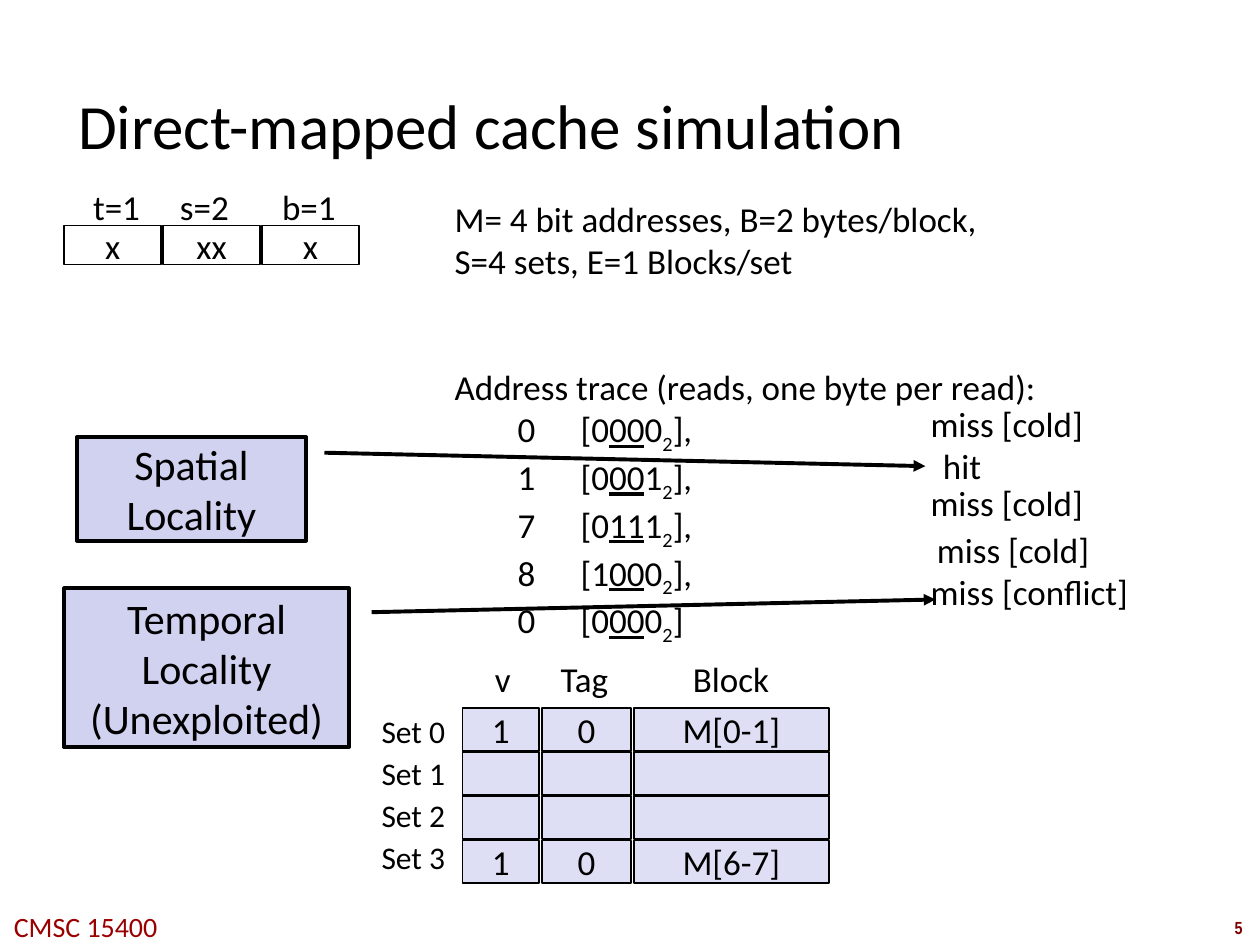
from dataclasses import dataclass

import pptx
import pptx.dml.color
import pptx.enum.shapes
import pptx.enum.text
import pptx.oxml
import pptx.oxml.ns
import pptx.util

Inches = pptx.util.Inches
Pt = pptx.util.Pt
RGBColor = pptx.dml.color.RGBColor
Align = pptx.enum.text.PP_ALIGN
Anchor = pptx.enum.text.MSO_ANCHOR
Preset = pptx.enum.shapes.MSO_SHAPE

BLACK = RGBColor(0x00, 0x00, 0x00)
WHITE = RGBColor(0xFF, 0xFF, 0xFF)
CACHE_FILL = RGBColor(0xDE, 0xDF, 0xF5)
CALLOUT_FILL = RGBColor(0xD1, 0xD1, 0xF0)
FOOTER_RED = RGBColor(0x99, 0x00, 0x00)
NUMBER_RED = RGBColor(0x80, 0x00, 0x00)


@dataclass
class Label:
    text: str
    left: float
    top: float
    width: float
    height: float = 0.43
    size: int = 20
    align: Align = Align.LEFT
    color: RGBColor = BLACK
    line_spacing: float = 1.0
    font: str = "Calibri"
    bold: bool = False


@dataclass
class Cell:
    text: str
    left: float
    top: float
    width: float
    height: float
    fill: RGBColor


@dataclass
class Callout:
    lines: list[str]
    left: float
    top: float
    width: float
    height: float
    adjustments: list[float]


@dataclass
class Access:
    """One read: its address and the tag, set and offset bits."""
    address: int
    tag: str
    set_bits: str
    offset: str
    ending: str = "],"


def format_font(font, size: int, color: RGBColor = BLACK, **extra) -> None:
    values = {"name": "Calibri", "size": Pt(size), **extra}
    for name, value in values.items():
        setattr(font, name, value)
    font.color.rgb = color


def add_box(slide, left: float, top: float, width: float, height: float):
    return slide.shapes.add_textbox(
        Inches(left), Inches(top), Inches(width), Inches(height))


def add_label(slide, label: Label) -> None:
    box = add_box(slide, label.left, label.top, label.width, label.height)
    box.text_frame.word_wrap = False
    paragraph = box.text_frame.paragraphs[0]
    paragraph.text = label.text
    paragraph.alignment = label.align
    paragraph.line_spacing = label.line_spacing
    format_font(paragraph.font, label.size, label.color,
                name=label.font, bold=label.bold)


def add_outlined_shape(slide, preset, item, fill: RGBColor, line_width: float,
                       lines: list[str], size: int):
    shape = slide.shapes.add_shape(
        preset, Inches(item.left), Inches(item.top),
        Inches(item.width), Inches(item.height))
    shape.shadow.inherit = False
    shape.fill.solid()
    shape.fill.fore_color.rgb = fill
    shape.line.color.rgb = BLACK
    shape.line.width = Pt(line_width)
    frame = shape.text_frame
    frame.vertical_anchor = Anchor.MIDDLE
    frame.text = "\n".join(lines)
    for paragraph in frame.paragraphs:
        paragraph.alignment = Align.CENTER
        format_font(paragraph.font, size)
    return shape


def add_cell(slide, cell: Cell) -> None:
    shape = add_outlined_shape(slide, Preset.RECTANGLE, cell, cell.fill, 1,
                               [cell.text], 20)
    shape.text_frame.word_wrap = False


def add_callout(slide, callout: Callout) -> None:
    shape = add_outlined_shape(slide, Preset.LINE_CALLOUT_1, callout,
                               CALLOUT_FILL, 2.25, callout.lines, 24)
    for index, value in enumerate(callout.adjustments):
        shape.adjustments[index] = value
    arrowhead = pptx.oxml.parse_xml(
        f'<a:tailEnd {pptx.oxml.ns.nsdecls("a")} type="triangle"/>')
    shape.line._get_or_add_ln().append(arrowhead)


def add_trace(slide, accesses: list[Access]) -> None:
    frame = add_box(slide, 3.51, 1.52, 6.74, 3.46).text_frame
    frame.word_wrap = True
    frame.text = ("M= 4 bit addresses, B=2 bytes/block,\n"
                  "S=4 sets, E=1 Blocks/set\n"
                  "Address trace (reads, one byte per read):")
    frame.paragraphs[2].space_before = Pt(48)
    for access in accesses:
        paragraph = frame.add_paragraph()
        paragraph.add_run().text = f"\t{access.address}\t[{access.tag}"
        set_run = paragraph.add_run()
        set_run.text = access.set_bits
        set_run.font.underline = True
        paragraph.add_run().text = access.offset
        base_run = paragraph.add_run()
        base_run.text = "2"
        base_run.font._element.set("baseline", "-25000")
        paragraph.add_run().text = access.ending
    for paragraph in frame.paragraphs:
        for run in paragraph.runs:
            format_font(run.font, 20)


def add_title(slide) -> None:
    title = slide.shapes.title
    placement = {"left": 0.58, "top": 0.58, "width": 8.5, "height": 0.82}
    for name, value in placement.items():
        setattr(title, name, Inches(value))
    frame = title.text_frame
    for side in ("left", "top", "right", "bottom"):
        setattr(frame, f"margin_{side}", Inches(0.04))
    frame.vertical_anchor = Anchor.MIDDLE
    frame.text = "Direct-mapped cache simulation"
    frame.paragraphs[0].alignment = Align.LEFT
    format_font(frame.paragraphs[0].font, 36)


def main() -> None:
    presentation = pptx.Presentation()
    presentation.slide_width = Inches(10)
    presentation.slide_height = Inches(7.5)
    slide = presentation.slides.add_slide(presentation.slide_layouts[5])

    add_title(slide)
    add_trace(slide, [
        Access(0, "0", "00", "0"),
        Access(1, "0", "00", "1"),
        Access(7, "0", "11", "1"),
        Access(8, "1", "00", "0"),
        Access(0, "0", "00", "0", "]"),
    ])

    for index, bits in enumerate(["x", "xx", "x"]):
        add_cell(slide, Cell(bits, 0.51 + 0.785 * index, 1.79, 0.77, 0.31, WHITE))

    cache_columns = [(3.67, 0.61), (4.3, 0.71), (5.03, 1.55)]
    cache_rows = [("1", "0", "M[0-1]"), ("", "", ""), ("", "", ""),
                  ("1", "0", "M[6-7]")]
    for row, texts in enumerate(cache_rows):
        for text, (left, width) in zip(texts, cache_columns):
            add_cell(slide, Cell(text, left, 5.62 + 0.35 * row, width, 0.34,
                                 CACHE_FILL))

    labels = [
        Label("t=1", 0.64, 1.42, 0.58),
        Label("s=2", 1.33, 1.42, 0.59),
        Label("b=1", 2.14, 1.42, 0.63),
        Label("v", 3.83, 5.17, 0.34),
        Label("Tag", 4.35, 5.17, 0.58),
        Label("Block", 5.4, 5.17, 0.81),
        Label("CMSC 15400", -0.03, 7.17, 1.42, 0.37, 16, Align.CENTER, FOOTER_RED),
        Label("5", 9.66, 7.23, 0.34, 0.27, 10, Align.CENTER, NUMBER_RED,
              font="Arial Narrow", bold=True),
    ]
    labels += [Label(f"Set {row}", 2.92, 5.6 + 0.333 * row, 0.72, 0.4, 18,
                     Align.CENTER) for row in range(4)]
    results = [("miss [cold]", 7.28, 3.25, 1.42), ("hit", 7.38, 3.58, 0.51),
               ("miss [cold]", 7.28, 3.88, 1.42),
               ("miss [cold]", 7.33, 4.25, 1.42),
               ("miss [conflict]", 7.28, 4.58, 1.78)]
    labels += [Label(*result, height=0.34, align=Align.CENTER, line_spacing=0.65)
               for result in results]
    for label in labels:
        add_label(slide, label)

    add_callout(slide, Callout(["Spatial Locality"], 0.61, 3.47, 1.82, 0.82,
                               [0.15, 1.08, 0.28, 3.7]))
    add_callout(slide, Callout(["Temporal Locality", "(Unexploited)"],
                               0.51, 4.67, 2.26, 1.26, [0.15, 1.08, 0.07, 3.06]))
    presentation.save("out.pptx")


if __name__ == "__main__":
    main()
